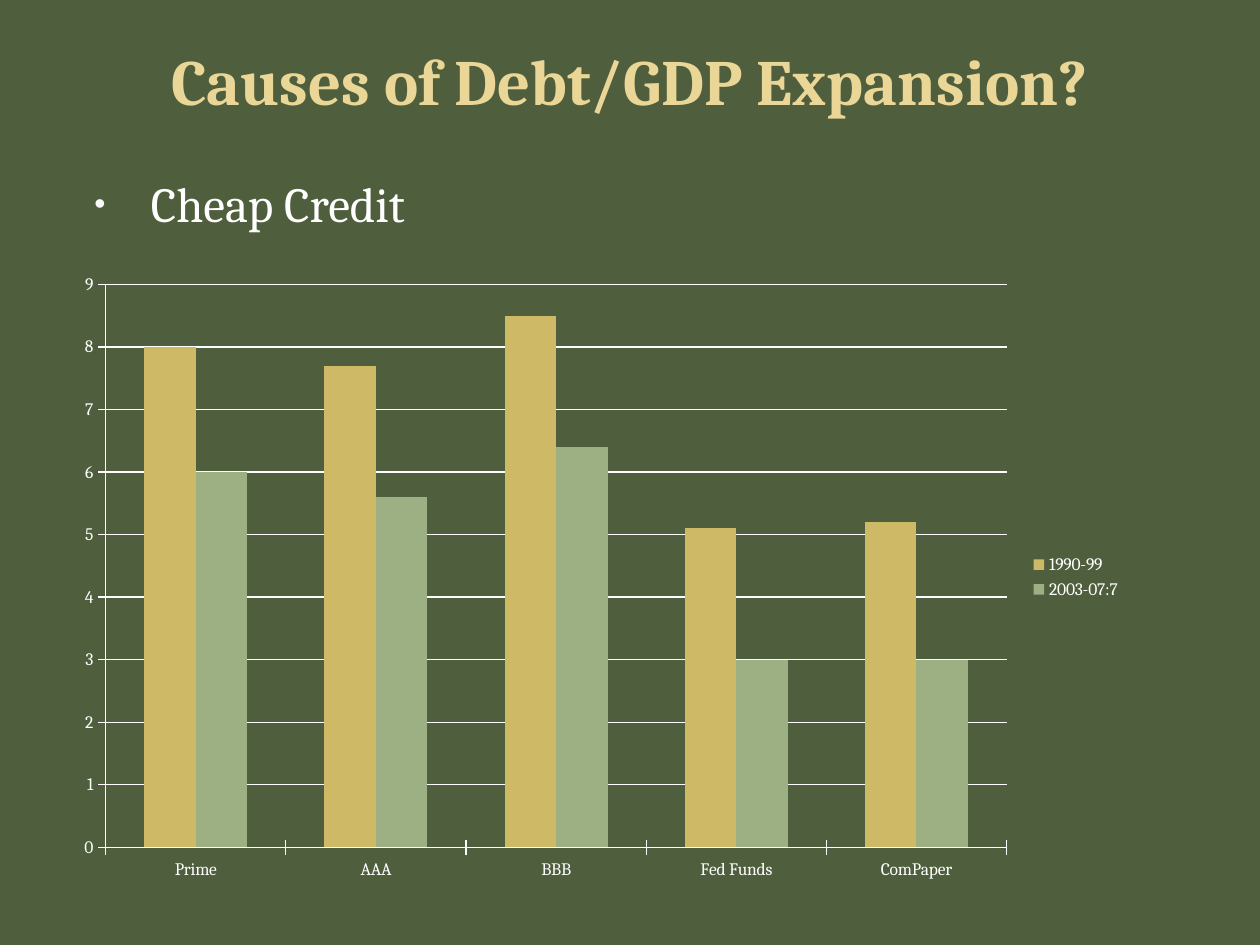
from dataclasses import dataclass

from lxml.etree import SubElement
from pptx import Presentation
from pptx.chart.data import CategoryChartData
from pptx.dml.color import RGBColor
from pptx.enum.chart import XL_CHART_TYPE as ChartType
from pptx.enum.chart import XL_LEGEND_POSITION as LegendPos
from pptx.enum.chart import XL_TICK_MARK as Tick
from pptx.enum.text import MSO_ANCHOR as Anchor
from pptx.enum.text import PP_ALIGN as Align
from pptx.oxml.ns import qn
from pptx.util import Inches, Pt

TITLE = "Causes of Debt/GDP Expansion?"
BULLETS = ["Cheap Credit"]
CATEGORIES = ["Prime", "AAA", "BBB", "Fed Funds", "ComPaper"]
SERIES = {
    "1990-99": (8, 7.7, 8.5, 5.1, 5.2),
    "2003-07:7": (6, 5.6, 6.4, 3, 3),
}


@dataclass(frozen=True)
class Theme:
    font: str = "Cambria"
    background: str = "4F5E3C"
    title: str = "EAD696"
    text: str = "FFFFFF"
    bullet: str = "F9F9F9"
    series: tuple = ("CEB966", "9CB084")
    title_size: float = 36.9
    body_size: float = 28
    chart_size: float = 10
    line: float = 0.75


THEME = Theme()
WIDTH, HEIGHT = 10, 7.5
MARGIN = WIDTH / 20
CONTENT = WIDTH - 2 * MARGIN
TITLE_BOX = (MARGIN, 0.17, CONTENT, 0.92)
BODY_BOX = (MARGIN, 1.33, CONTENT, 5.33)
CHART_BOX = (MARGIN, 2.08, WIDTH * 0.85, HEIGHT * 2 / 3)


def box(lengths):
    return [Inches(v) for v in lengths]


def rgb(value):
    return RGBColor.from_string(value)


def style_font(font, size, color, bold=False):
    font.name, font.size, font.bold = THEME.font, Pt(size), bold
    font.color.rgb = rgb(color)


def style_line(line):
    line.color.rgb = rgb(THEME.text)
    line.width = Pt(THEME.line)


def add_bullet(p):
    """Hanging indent with a small round bullet."""
    pPr = p._p.get_or_add_pPr()
    pPr.set("marL", str(Inches(0.6)))
    pPr.set("indent", str(Inches(-0.45)))
    before = SubElement(pPr, qn("a:spcBef"))
    SubElement(before, qn("a:spcPct"), val="20000")
    color = SubElement(pPr, qn("a:buClr"))
    SubElement(color, qn("a:srgbClr"), val=THEME.bullet)
    SubElement(pPr, qn("a:buSzPct"), val="65000")
    SubElement(pPr, qn("a:buFont"), typeface="Arial")
    SubElement(pPr, qn("a:buChar"), char="•")


def add_text_frame(slide, lengths, anchor):
    tf = slide.shapes.add_textbox(*box(lengths)).text_frame
    tf.word_wrap = True
    tf.vertical_anchor = anchor
    return tf


def add_title(slide):
    p = add_text_frame(slide, TITLE_BOX, Anchor.MIDDLE).paragraphs[0]
    p.alignment = Align.CENTER
    r = p.add_run()
    r.text = TITLE
    style_font(r.font, THEME.title_size, THEME.title, bold=True)


def add_body(slide):
    tf = add_text_frame(slide, BODY_BOX, Anchor.TOP)
    for i, text in enumerate(BULLETS):
        p = tf.add_paragraph() if i else tf.paragraphs[0]
        add_bullet(p)
        r = p.add_run()
        r.text = text
        style_font(r.font, THEME.body_size, THEME.text)


def add_rate_chart(slide):
    data = CategoryChartData()
    data.categories = CATEGORIES
    for name, values in SERIES.items():
        data.add_series(name, values)
    chart = slide.shapes.add_chart(
        ChartType.COLUMN_CLUSTERED, *box(CHART_BOX), data).chart
    style_font(chart.font, THEME.chart_size, THEME.text)
    chart.has_title = False
    chart.has_legend = True
    chart.legend.position = LegendPos.RIGHT
    chart.legend.include_in_layout = False

    plot = chart.plots[0]
    plot.vary_by_categories = False
    plot.gap_width, plot.overlap = 150, 0
    for series, color in zip(plot.series, THEME.series):
        series.invert_if_negative = False
        series.format.fill.solid()
        series.format.fill.fore_color.rgb = rgb(color)

    for axis in (chart.category_axis, chart.value_axis):
        axis.major_tick_mark = Tick.CROSS
        style_line(axis.format.line)
    values = chart.value_axis
    values.minimum_scale, values.maximum_scale, values.major_unit = 0, 9, 1
    values.has_major_gridlines = True
    style_line(values.major_gridlines.format.line)


def main():
    prs = Presentation()
    prs.slide_width, prs.slide_height = Inches(WIDTH), Inches(HEIGHT)
    slide = prs.slides.add_slide(prs.slide_layouts[6])
    slide.background.fill.solid()
    slide.background.fill.fore_color.rgb = rgb(THEME.background)
    add_title(slide)
    add_body(slide)
    add_rate_chart(slide)
    prs.save("out.pptx")


if __name__ == "__main__":
    main()
